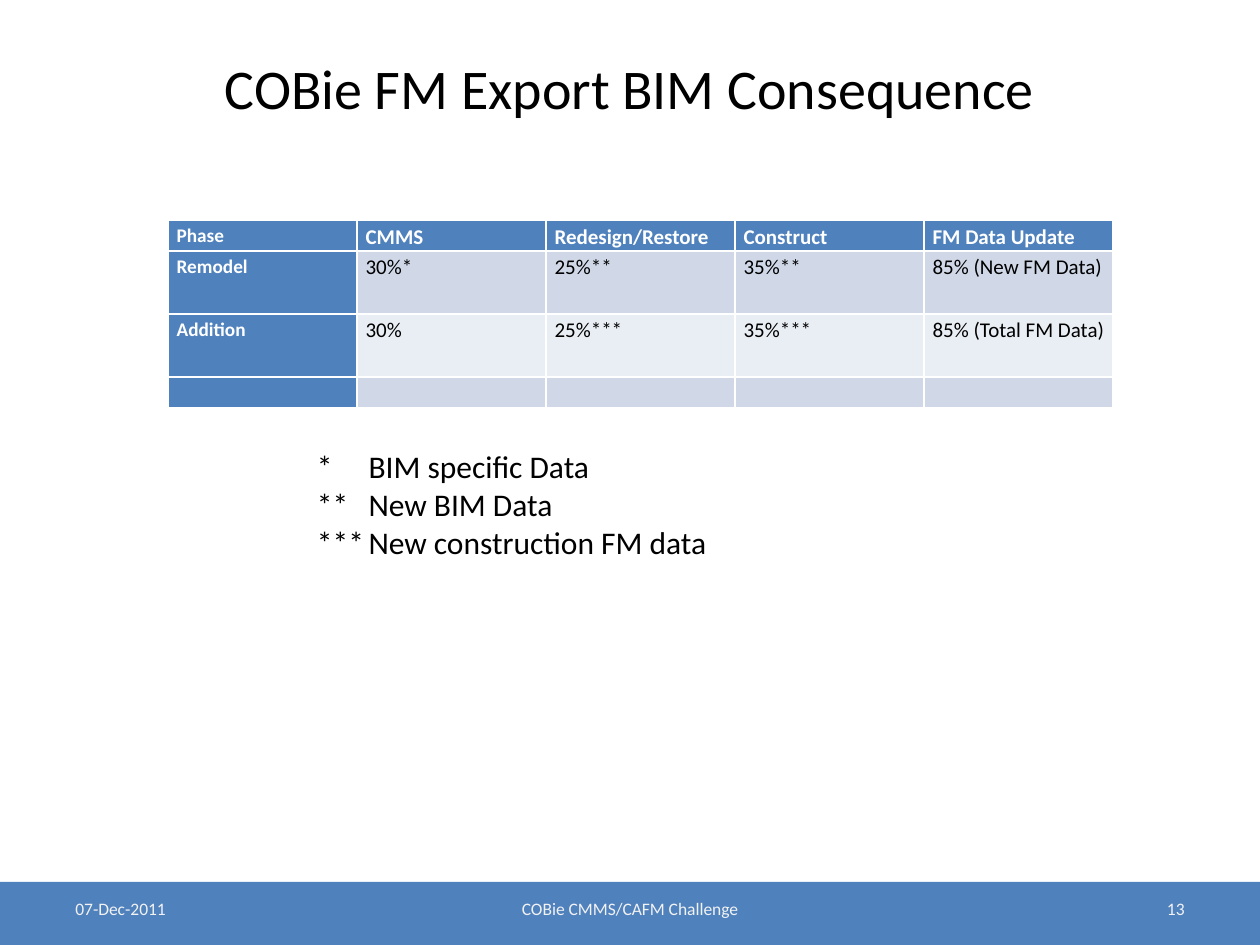
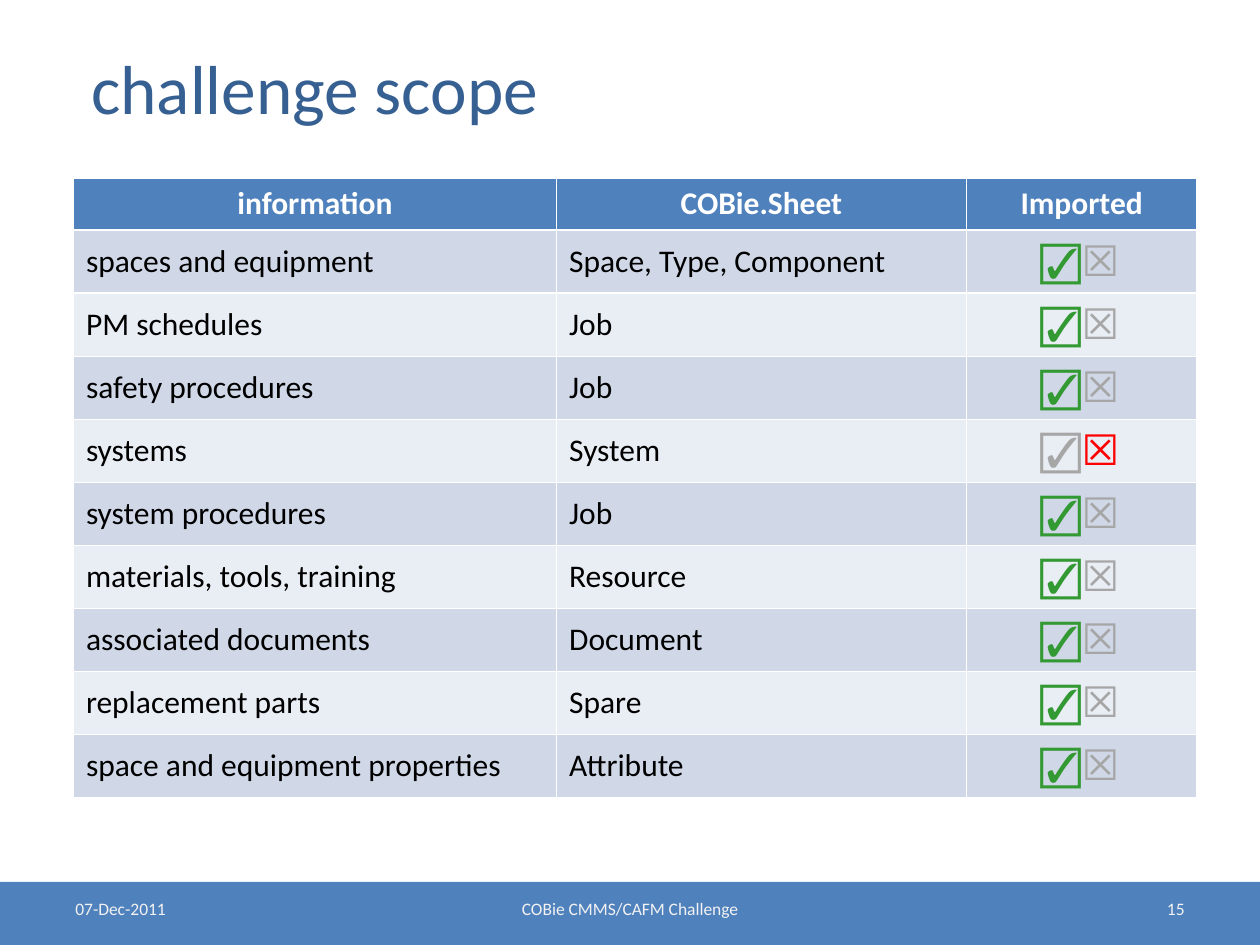
from lxml.etree import SubElement
from pptx import Presentation
from pptx.dml.color import RGBColor
from pptx.enum.shapes import MSO_SHAPE as Shape
from pptx.enum.text import MSO_ANCHOR as Anchor, PP_ALIGN as Align
from pptx.oxml.ns import qn
from pptx.util import Cm, Pt

COLORS = {
    "accent": "4F81BD", "title": "376092", "footer": "F2F2F2",
    "odd": "D0D8E8", "even": "E9EDF4", "white": "FFFFFF", "black": "000000",
    "yes": "339933", "no": "FF0000", "off": "A6A6A6",
}


def add_span(para, text, size, color, bold=False):
    span = para.add_run()
    span.text = text
    formats = {"name": "Calibri", "size": Pt(size), "bold": bold}
    for name, value in formats.items():
        setattr(span.font, name, value)
    span.font.color.rgb = RGBColor.from_string(COLORS[color])


def add_page(deck, title, title_size, title_color, title_align, title_inset, number):
    """Add a slide with its title, footer band and footer texts."""
    page = deck.slides.add_slide(deck.slide_layouts[5])
    heading = page.shapes.title
    place = {"left": Cm(1.27), "top": Cm(0.76), "width": Cm(22.86), "height": Cm(1.98)}
    for name, value in place.items():
        setattr(heading, name, value)
    heading.text_frame.vertical_anchor = Anchor.MIDDLE
    heading.text_frame.margin_left = Cm(title_inset)
    para = heading.text_frame.paragraphs[0]
    para.alignment = title_align
    add_span(para, title, title_size, title_color)

    band = page.shapes.add_shape(Shape.RECTANGLE, 0, Cm(17.78), deck.slide_width, Cm(1.27))
    band.shadow.inherit = False
    band.fill.solid()
    band.fill.fore_color.rgb = RGBColor.from_string(COLORS["accent"])
    band.line.fill.background()

    footers = [
        (1.27, 5.92, Align.LEFT, "07-Dec-2011"),
        (8.68, 8.04, Align.CENTER, "COBie CMMS/CAFM Challenge"),
        (18.21, 5.92, Align.RIGHT, str(number)),
    ]
    for left, width, align, text in footers:
        box = page.shapes.add_textbox(Cm(left), Cm(17.98), Cm(width), Cm(0.69))
        box.text_frame.word_wrap = True
        para = box.text_frame.paragraphs[0]
        para.alignment = align
        add_span(para, text, 10, "footer")
    return page


deck = Presentation()
deck.slide_width, deck.slide_height = Cm(25.4), Cm(19.05)

# Slide 13: consequence table and its legend
consequence_page = add_page(
    deck, "COBie FM Export BIM Consequence", 32, "black", Align.CENTER, 0.25, 13)
phases = [
    ["Phase", "CMMS", "Redesign/Restore", "Construct", "FM Data Update"],
    ["Remodel", "30%*", "25%**", "35%**", "85% (New FM Data)"],
    ["Addition", "30%", "25%***", "35%***", "85% (Total FM Data)"],
    [""] * 5,
]
phase_table = consequence_page.shapes.add_table(
    4, 5, Cm(3.39), Cm(4.45), Cm(19.05), Cm(3.76)).table
phase_table.first_col = True
for row, height in zip(phase_table.rows, [0.61, 1.27, 1.27, 0.61]):
    row.height = Cm(height)
cell_margins = {"margin_left": Cm(0.17), "margin_right": Cm(0.17),
                "margin_top": 0, "margin_bottom": 0}
for r, values in enumerate(phases):
    for c, value in enumerate(values):
        cell = phase_table.cell(r, c)
        for name, margin in cell_margins.items():
            setattr(cell, name, margin)
        is_label = r == 0 or c == 0
        fill = "accent" if is_label else "odd" if r % 2 else "even"
        cell.fill.solid()
        cell.fill.fore_color.rgb = RGBColor.from_string(COLORS[fill])
        para = cell.text_frame.paragraphs[0]
        para.line_spacing = 1.15
        if value:
            add_span(para, value, 12 if c else 11, "white" if is_label else "black", is_label)
        else:
            SubElement(para._p, qn("a:endParaRPr"), sz="1100")

legend = consequence_page.shapes.add_textbox(Cm(6.14), Cm(8.89), Cm(12.7), Cm(2.57))
legend.text_frame.word_wrap = True
notes = ["BIM specific Data", "New BIM Data", "New construction FM data"]
for i, note in enumerate(notes):
    para = legend.text_frame.add_paragraph() if i else legend.text_frame.paragraphs[0]
    add_span(para, "*" * (i + 1) + "\t" + note, 18, "black")
    hanging = para._p.get_or_add_pPr()
    hanging.set("marL", str(Cm(1.04)))
    hanging.set("indent", str(-Cm(1.04)))

# Slide 15: scope table with import marks
scope_page = add_page(deck, "challenge scope", 39.6, "title", Align.LEFT, 0.57, 15)
scope = [
    ("information", "COBie.Sheet", "Imported"),
    ("spaces and equipment", "Space, Type, Component", True),
    ("PM schedules", "Job", True),
    ("safety procedures", "Job", True),
    ("systems", "System", False),
    ("system procedures", "Job", True),
    ("materials, tools, training", "Resource", True),
    ("associated documents", "Document", True),
    ("replacement parts", "Spare", True),
    ("space and equipment properties", "Attribute", True),
]
scope_table = scope_page.shapes.add_table(
    len(scope), 3, Cm(1.48), Cm(3.6), Cm(22.65), Cm(12.47)).table
for column, width in zip(scope_table.columns, [9.74, 8.26, 4.65]):
    column.width = Cm(width)
for r, values in enumerate(scope):
    scope_table.rows[r].height = Cm(1.27 if r else 1.04)
    for c, value in enumerate(values):
        cell = scope_table.cell(r, c)
        fill = "accent" if r == 0 else "odd" if r % 2 else "even"
        cell.fill.solid()
        cell.fill.fore_color.rgb = RGBColor.from_string(COLORS[fill])
        cell.vertical_anchor = Anchor.MIDDLE if r else Anchor.TOP
        para = cell.text_frame.paragraphs[0]
        para.alignment = Align.CENTER if r == 0 or c == 2 else Align.LEFT
        if r and c == 2:
            add_span(para, "☑", 24, "yes" if value else "off", True)
            add_span(para, "☒", 24, "off" if value else "no", True)
        else:
            add_span(para, value, 18, "black" if r else "white", r == 0)

deck.save("out.pptx")
